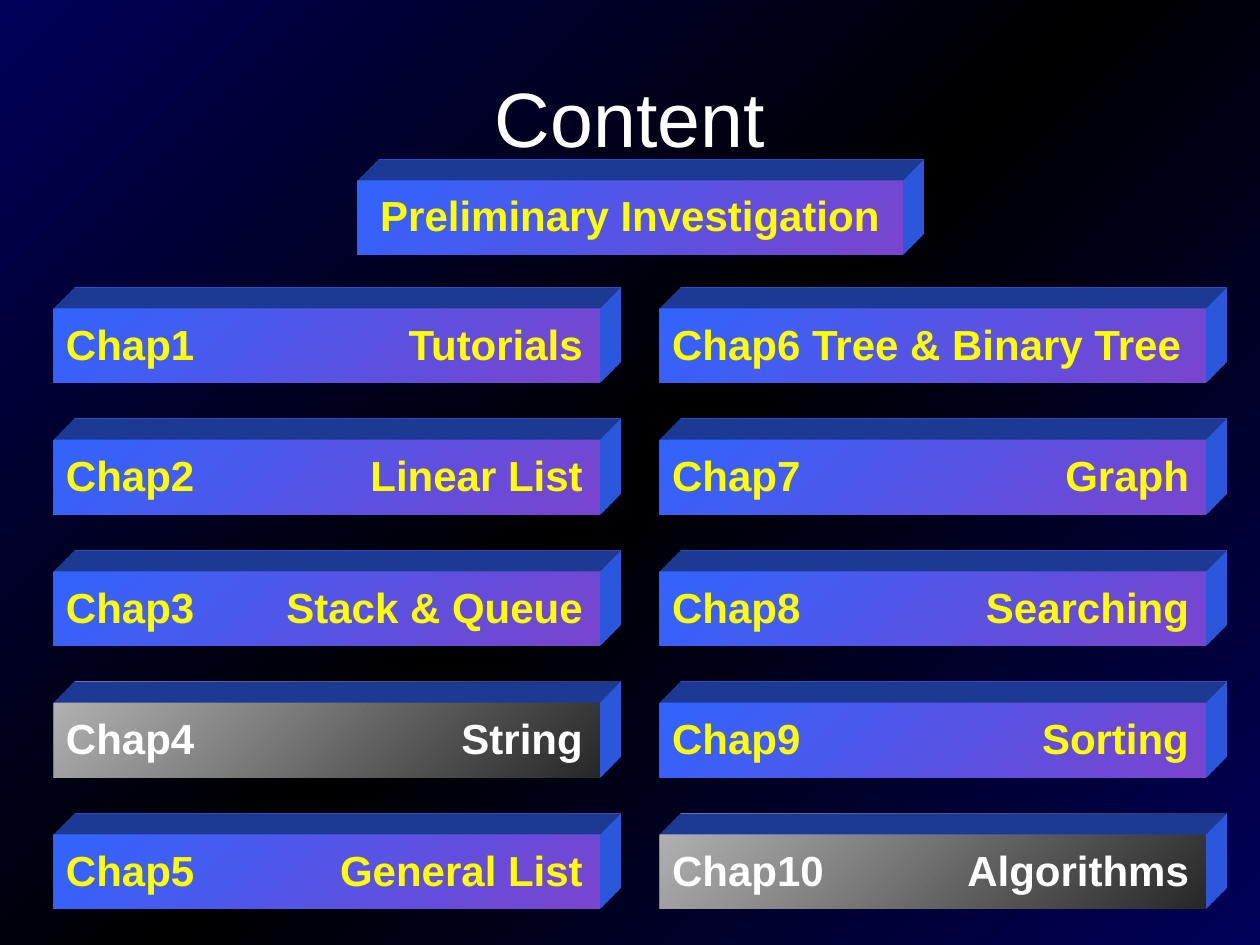
from typing import NamedTuple

from lxml.etree import SubElement
from pptx import Presentation
from pptx.dml.color import RGBColor
from pptx.enum.shapes import MSO_SHAPE
from pptx.enum.text import MSO_ANCHOR, PP_ALIGN
from pptx.oxml import parse_xml
from pptx.oxml.ns import nsdecls, qn
from pptx.util import Cm, Pt

BAR_WIDTH, BAR_HEIGHT = 11, 1.5
COLUMN_LEFTS = (1.08, 13.3)
FIRST_TOP, ROW_STEP = 6.22, 2.65
NAME_TAB = 10.42  # right edge of the chapter names, inside the bar


class Style(NamedTuple):
    start: str
    end: str
    text: str


class Chapter(NamedTuple):
    label: str
    style: Style


ACTIVE = Style("3366FF", "7B46D0", "FFFF00")
INACTIVE = Style("B2B2B2", "292929", "FFFFFF")

COLUMNS = (
    (
        Chapter("Chap1\tTutorials", ACTIVE),
        Chapter("Chap2\tLinear List", ACTIVE),
        Chapter("Chap3\tStack & Queue", ACTIVE),
        Chapter("Chap4\tString", INACTIVE),
        Chapter("Chap5\tGeneral List", ACTIVE),
    ),
    (
        Chapter("Chap6 Tree & Binary Tree", ACTIVE),
        Chapter("Chap7\tGraph", ACTIVE),
        Chapter("Chap8\tSearching", ACTIVE),
        Chapter("Chap9\tSorting", ACTIVE),
        Chapter("Chap10\tAlgorithms", INACTIVE),
    ),
)


def rgb(hex_color: str) -> RGBColor:
    return RGBColor.from_string(hex_color)


def set_gradient(fill, colors: tuple) -> None:
    """Diagonal gradient from top left to bottom right."""
    fill.gradient()
    fill.gradient_angle = 315
    stops = fill._fill._gradFill.find(qn("a:gsLst"))
    for stop in list(stops):
        stops.remove(stop)
    for index, color in enumerate(colors):
        position = 100000 * index // (len(colors) - 1)
        stop = SubElement(stops, qn("a:gs"), pos=str(position))
        SubElement(stop, qn("a:srgbClr"), val=color)


def extrude(bar) -> None:
    """Blue depth towards the top right."""
    bar._element.spPr.append(parse_xml(
        f'<a:scene3d {nsdecls("a")}><a:camera prst="legacyObliqueTopRight"/>'
        '<a:lightRig rig="legacyFlat3" dir="b"/></a:scene3d>'))
    bar._element.spPr.append(parse_xml(
        f'<a:sp3d {nsdecls("a")} extrusionH="430200" prstMaterial="legacyMatte">'
        '<a:bevelT w="13500" h="13500" prst="angle"/>'
        '<a:bevelB w="13500" h="13500" prst="angle"/>'
        '<a:extrusionClr><a:srgbClr val="3366FF"/></a:extrusionClr></a:sp3d>'))


def write(frame, text: str, align: PP_ALIGN, color: str, size: int, bold: bool) -> None:
    paragraph = frame.paragraphs[0]
    paragraph.alignment = align
    if "\t" in text:
        tabs = SubElement(paragraph._p.get_or_add_pPr(), qn("a:tabLst"))
        SubElement(tabs, qn("a:tab"), pos=str(Cm(NAME_TAB)), algn="r")
    run = paragraph.add_run()
    run.text = text
    for name, value in {"name": "Arial", "size": Pt(size), "bold": bold}.items():
        setattr(run.font, name, value)
    run.font.color.rgb = rgb(color)


def add_bar(slide, left: float, top: float, chapter: Chapter,
            align: PP_ALIGN = PP_ALIGN.LEFT) -> None:
    bar = slide.shapes.add_shape(
        MSO_SHAPE.RECTANGLE, Cm(left), Cm(top), Cm(BAR_WIDTH), Cm(BAR_HEIGHT))
    bar.shadow.inherit = False
    bar.line.fill.background()
    set_gradient(bar.fill, (chapter.style.start, chapter.style.end))
    extrude(bar)
    frame_format = {"vertical_anchor": MSO_ANCHOR.TOP, "word_wrap": True,
                    "margin_top": Cm(0.2), "margin_bottom": Cm(0)}
    for name, value in frame_format.items():
        setattr(bar.text_frame, name, value)
    write(bar.text_frame, chapter.label, align, chapter.style.text, 24, True)


def main() -> None:
    presentation = Presentation()
    presentation.slide_width, presentation.slide_height = Cm(25.4), Cm(19.05)
    slide = presentation.slides.add_slide(presentation.slide_layouts[6])
    set_gradient(slide.background.fill, ("000058", "000000", "000058"))

    # Chapter grid
    for left, chapters in zip(COLUMN_LEFTS, COLUMNS):
        for row, chapter in enumerate(chapters):
            add_bar(slide, left, FIRST_TOP + row * ROW_STEP, chapter)

    # Title
    title = slide.shapes.add_textbox(Cm(1.27), Cm(0.76), Cm(22.86), Cm(3.18))
    title.text_frame.word_wrap = True
    title.text_frame.vertical_anchor = MSO_ANCHOR.MIDDLE
    write(title.text_frame, "Content", PP_ALIGN.CENTER, "FFFFFF", 44, False)

    # Introduction above the grid
    add_bar(slide, 7.2, 3.63, Chapter("Preliminary Investigation", ACTIVE),
            PP_ALIGN.CENTER)

    presentation.save("out.pptx")


if __name__ == "__main__":
    main()
